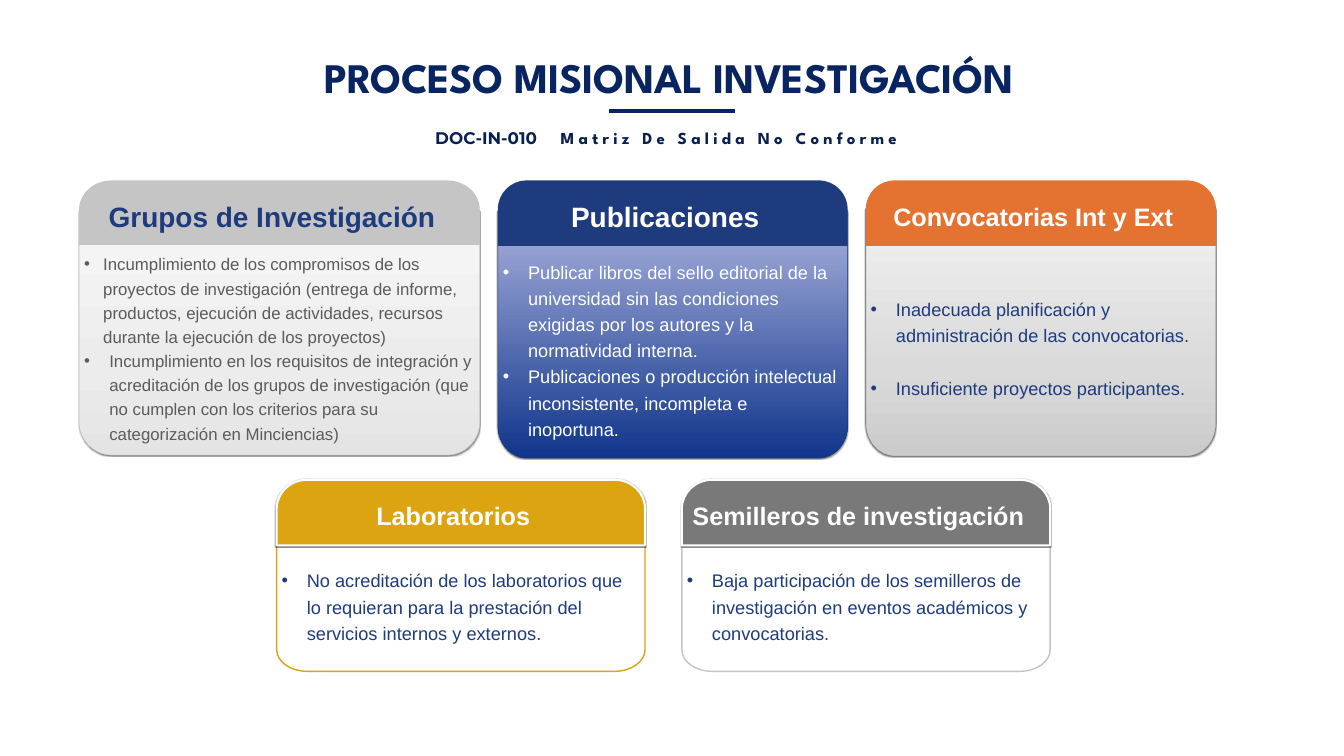
from copy import deepcopy
from dataclasses import dataclass
from typing import Optional

from lxml.etree import SubElement
from pptx import Presentation
from pptx.dml.color import RGBColor
from pptx.enum.shapes import MSO_CONNECTOR
from pptx.enum.text import MSO_ANCHOR, PP_ALIGN
from pptx.oxml.ns import qn
from pptx.util import Inches, Pt

NAVY = RGBColor(0x09, 0x25, 0x61)
INK = RGBColor(0x08, 0x1F, 0x50)
BLUE = RGBColor(0x1E, 0x3B, 0x7D)
EDGE = RGBColor(0x1B, 0x39, 0x7D)
DEEP = RGBColor(0x10, 0x35, 0x8B)
LILAC = RGBColor(0xAB, 0xB3, 0xDE)
ORANGE = RGBColor(0xE4, 0x73, 0x31)
GOLD = RGBColor(0xDD, 0xA4, 0x11)
WHITE = RGBColor(0xFF, 0xFF, 0xFF)
SILVER = RGBColor(0xC5, 0xC5, 0xC5)
RIM = RGBColor(0xC1, 0xC1, 0xC1)
STEEL = RGBColor(0x76, 0x76, 0x76)
GRAY = RGBColor(0x79, 0x79, 0x79)
TEXT = RGBColor(0x5B, 0x5B, 0x5B)
PALE = [(0, RGBColor(0xE4, 0xE4, 0xE4)), (0.35, RGBColor(0xEC, 0xEC, 0xEC)),
        (1, RGBColor(0xF7, 0xF7, 0xF7))]
ASH = [(0, RGBColor(0xCB, 0xCB, 0xCB)), (0.35, RGBColor(0xDA, 0xDA, 0xDA)),
       (1, RGBColor(0xF1, 0xF1, 0xF1))]
INDIGO = [(0, DEEP), (1, LILAC)]
PLAIN = [(0, WHITE)]

BEND = 0.55  # control point reach of a quarter ellipse
ROW1, ROW2 = 3.58, 9.52


@dataclass
class Block:
    """A panel whose top or bottom corners are rounded."""
    x: float
    y: float
    w: float
    h: float
    rx: float
    ry: float
    top: bool
    fill: list
    line: Optional[RGBColor]
    width: float
    shadow: bool


@dataclass
class Card:
    x: float
    y: float
    w: float
    title: str
    size: int
    ink: RGBColor
    color: RGBColor
    items: list
    text: RGBColor
    fill: list
    line: RGBColor
    head: float = 1.3
    drop: float = 0.6
    body: float = 4.91
    rx: float = 0.57
    ry: float = 0.65
    font: int = 26
    gap: int = 0
    first: float = 0.5
    framed: bool = False


CARDS = [
    Card(9.88, ROW1, 6.94, "Publicaciones", 40, WHITE, BLUE,
         ["Publicar libros del sello editorial de la universidad sin las condiciones "
          "exigidas por los autores y la normatividad interna.",
          "Publicaciones o producción intelectual inconsistente, incompleta e inoportuna."],
         WHITE, INDIGO, EDGE),
    Card(1.57, ROW1, 7.95, "Grupos de Investigación", 40, BLUE, SILVER,
         ["Incumplimiento de los compromisos de los proyectos de investigación (entrega de "
          "informe, productos, ejecución de actividades, recursos durante la ejecución de "
          "los proyectos)",
          "Incumplimiento en los requisitos de integración y acreditación de los grupos de "
          "investigación (que no cumplen con los criterios para su categorización en "
          "Minciencias)"],
         TEXT, PALE, RIM, head=1.28, body=4.85, rx=0.65, font=24, first=0.38),
    Card(17.18, ROW1, 6.95, "Convocatorias Int y Ext", 36, WHITE, ORANGE,
         ["Inadecuada planificación y administración de las convocatorias.",
          "Insuficiente proyectos participantes."],
         BLUE, ASH, STEEL, drop=0.56, gap=38),
    Card(5.49, ROW2, 7.31, "Laboratorios", 36, WHITE, GOLD,
         ["No acreditación de los laboratorios que lo requieran para la prestación del "
          "servicios internos y externos."],
         BLUE, PLAIN, GOLD, body=3.2, rx=0.6, ry=0.43, framed=True),
    Card(13.53, ROW2, 7.31, "Semilleros de investigación", 36, WHITE, GRAY,
         ["Baja participación de los semilleros de investigación en eventos académicos y "
          "convocatorias."],
         BLUE, PLAIN, SILVER, body=3.2, rx=0.6, ry=0.43, framed=True),
]


def style(font, name: str, size: float, color: RGBColor, bold: bool = False) -> None:
    font.name, font.size, font.bold = name, Pt(size), bold
    font.color.rgb = color


def track(run, points: float) -> None:
    run.font._element.set("spc", str(round(points * 100)))


def paint(shape, stops: list) -> None:
    if len(stops) == 1:
        shape.fill.solid()
        shape.fill.fore_color.rgb = stops[0][1]
        return
    shape.fill.gradient()
    shape.fill.gradient_angle = 90
    items = shape._element.spPr.find(qn("a:gradFill")).find(qn("a:gsLst"))
    for _ in stops[2:]:
        items.insert(1, deepcopy(items[0]))
    for stop, (place, color) in zip(shape.fill.gradient_stops, stops):
        stop.position = place
        stop.color.rgb = color


def shade(shape) -> None:
    effects = shape._element.spPr.find(qn("a:effectLst"))
    outer = SubElement(effects, qn("a:outerShdw"), blurRad="12700", dist="12700",
                       dir="5400000", rotWithShape="0")
    color = SubElement(outer, qn("a:srgbClr"), val="000000")
    SubElement(color, qn("a:alpha"), val="50000")


def curve(shape) -> None:
    """Turn the two cut corners of a panel into quarter ellipses."""
    lines = list(shape._element.iter(qn("a:lnTo")))
    spots = [(int(line[0].get("x")), int(line[0].get("y"))) for line in lines]
    for i in (1, 3):
        (px, py), (qx, qy) = spots[i - 1], spots[i]
        cx, cy = (px, qy) if i == 1 else (qx, py)
        line = lines[i]
        line.tag = qn("a:cubicBezTo")
        for n, (sx, sy) in enumerate([(px, py), (qx, qy)]):
            pt = deepcopy(line[-1])
            pt.set("x", str(round(sx + BEND * (cx - sx))))
            pt.set("y", str(round(sy + BEND * (cy - sy))))
            line.insert(n, pt)


def draw_block(shapes, b: Block):
    if b.top:
        flat, mid, far = b.y + b.h, b.y + b.ry, b.y
    else:
        flat, mid, far = b.y, b.y + b.h - b.ry, b.y + b.h
    end = b.x + b.w
    dots = [(b.x, mid), (b.x + b.rx, far), (end - b.rx, far), (end, mid), (end, flat)]
    pen = shapes.build_freeform(Inches(b.x), Inches(flat))
    pen.add_line_segments([(Inches(x), Inches(y)) for x, y in dots], close=True)
    shape = pen.convert_to_shape()
    curve(shape)
    paint(shape, b.fill)
    if b.line is None:
        shape.line.fill.background()
    else:
        shape.line.color.rgb = b.line
        shape.line.width = Pt(b.width)
    shape.shadow.inherit = False
    if b.shadow:
        shade(shape)
    return shape


def set_frame(shape, top: float, right: float):
    frame = shape.text_frame
    frame.word_wrap = True
    frame.vertical_anchor = MSO_ANCHOR.MIDDLE
    frame.margin_left, frame.margin_right = Inches(0.1), Inches(right)
    frame.margin_top, frame.margin_bottom = Inches(top), Inches(0.05)
    return frame


def draw_card(shapes, c: Card) -> None:
    # Body with its bullets
    body = draw_block(shapes, Block(c.x, c.y + c.drop, c.w, c.body, c.rx, c.ry, False, c.fill,
                                    c.line, 2 if c.framed else 0.75, not c.framed))
    frame = set_frame(body, 0.6, 0.1)
    frame.text = "\n".join(c.items)
    for i, para in enumerate(frame.paragraphs):
        props = para._p.get_or_add_pPr()
        indent = Inches(0.5 if i else c.first)
        props.set("marL", str(indent))
        props.set("indent", str(-indent))
        SubElement(props, qn("a:buFont"), typeface="Arial")
        SubElement(props, qn("a:buChar"), char="•")
        para.alignment = PP_ALIGN.LEFT
        para.line_spacing = 1.2
        if i and c.gap:
            para.space_before = Pt(c.gap)
        style(para.runs[0].font, "Arial", c.font, c.text)

    # Header over the body
    head = draw_block(shapes, Block(c.x, c.y, c.w, c.head, c.rx, 0.57, True, [(0, c.color)],
                                    WHITE if c.framed else None, 3, c.framed))
    frame = set_frame(head, 0.05, 0.4)
    frame.text = c.title
    para = frame.paragraphs[0]
    para.alignment = PP_ALIGN.CENTER
    para.line_spacing = 1.2
    style(para.runs[0].font, "Arial", c.size, c.ink, True)


def main() -> None:
    deck = Presentation()
    deck.slide_width, deck.slide_height = Inches(26.67), Inches(15)
    slide = deck.slides.add_slide(deck.slide_layouts[5])
    shapes = slide.shapes

    # Title
    title = shapes.title
    title.left, title.top = Inches(5.76), Inches(0.97)
    title.width, title.height = Inches(15.04), Inches(1.11)
    frame = title.text_frame
    frame.text = "PROCESO MISIONAL INVESTIGACIÓN"
    frame.vertical_anchor = MSO_ANCHOR.TOP
    para = frame.paragraphs[0]
    para.alignment = PP_ALIGN.CENTER
    style(para.runs[0].font, "League Spartan", 60, NAVY, True)
    track(para.runs[0], -0.5)

    # Subtitle: code, wide gap, name
    box = shapes.add_textbox(Inches(8.48), Inches(2.42), Inches(9.48), Inches(0.55))
    frame = box.text_frame
    frame.word_wrap = False
    frame.vertical_anchor = MSO_ANCHOR.MIDDLE
    para = frame.paragraphs[0]
    para.alignment = PP_ALIGN.CENTER
    para.line_spacing = 1.2
    for words, name, space in [("DOC-IN-010", "Montserrat", 0), (" ", "Montserrat", 27),
                               ("Matriz De Salida No Conforme", "League Spartan", 6)]:
        run = para.add_run()
        run.text = words
        style(run.font, name, 24, INK, True)
        track(run, space)

    # Rule under the title
    rule = shapes.add_connector(MSO_CONNECTOR.STRAIGHT, Inches(12.09), Inches(2.21),
                                Inches(14.59), Inches(2.21))
    rule.line.color.rgb = NAVY
    rule.line.width = Pt(6)
    SubElement(rule._element.spPr, qn("a:effectLst"))

    # Cards
    for card in CARDS:
        draw_card(shapes, card)

    deck.save("out.pptx")


if __name__ == "__main__":
    main()
